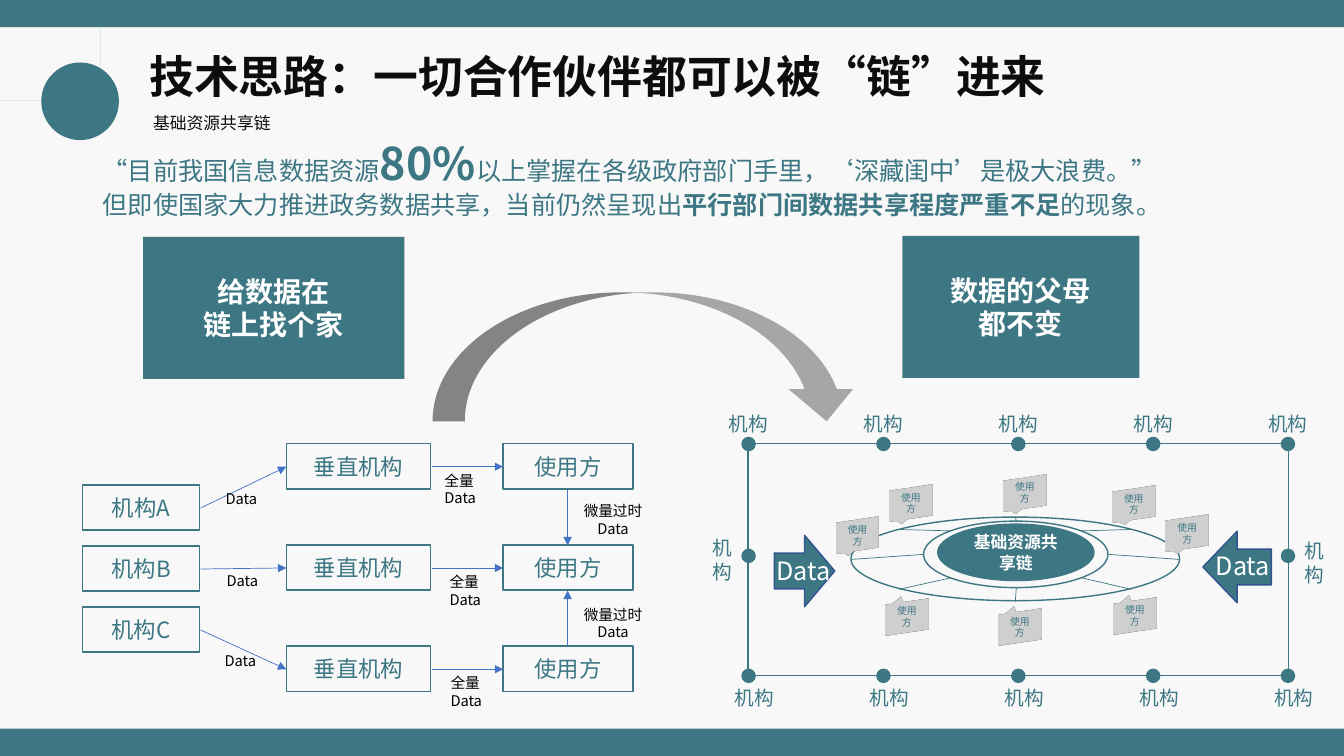
from math import cos, sin, radians
from lxml.etree import SubElement
from pptx import Presentation
from pptx.dml.color import RGBColor
from pptx.enum.shapes import MSO_CONNECTOR, MSO_SHAPE
from pptx.enum.text import MSO_ANCHOR, MSO_AUTO_SIZE, PP_ALIGN
from pptx.oxml.ns import qn
from pptx.util import Inches, Pt

FONT = "Noto Sans CJK SC"
TEAL = RGBColor(0x3D, 0x77, 0x84)
WHITE = RGBColor(0xFF, 0xFF, 0xFF)
PAPER = RGBColor(0xF8, 0xF8, 0xF8)
INK = RGBColor(0x0D, 0x0D, 0x0D)
BLACK = RGBColor(0, 0, 0)
BLUE = RGBColor(0x44, 0x72, 0xC4)
NAVY = RGBColor(0x32, 0x54, 0x91)
GREY = RGBColor(0xA6, 0xA6, 0xA6)
SILVER = RGBColor(0xBF, 0xBF, 0xBF)
PALE = RGBColor(0xD9, 0xD9, 0xD9)
MIDDLE = PP_ALIGN.CENTER


def style(font, size, color, bold=False):
    font.size = Pt(size)
    font.bold = bold
    font.color.rgb = color
    font.name = FONT
    SubElement(font._rPr, qn("a:ea")).set("typeface", FONT)


def write(frame, text, size, color, bold=False, align=PP_ALIGN.LEFT):
    frame.text = text
    for para in frame.paragraphs:
        para.alignment = align
        style(para.font, size, color, bold)


def label(slide, box, text, size, color, align=PP_ALIGN.LEFT, wrap=False):
    frame = slide.shapes.add_textbox(*map(Inches, box)).text_frame
    frame.word_wrap = wrap
    frame.auto_size = MSO_AUTO_SIZE.SHAPE_TO_FIT_TEXT
    write(frame, text, size, color, align=align)
    return frame


def paint(shape, fill, line=None, width=1):
    shape.shadow.inherit = False
    if fill is None:
        shape.fill.background()
    else:
        shape.fill.solid()
        shape.fill.fore_color.rgb = fill
    if line is None:
        shape.line.fill.background()
    else:
        shape.line.color.rgb = line
        shape.line.width = Pt(width)


def draw(slide, kind, box, fill=None, line=None, width=1):
    shape = slide.shapes.add_shape(kind, *map(Inches, box))
    paint(shape, fill, line, width)
    return shape


def block(slide, box, text, size, color, fill=None, line=None, bold=False,
          kind=MSO_SHAPE.RECTANGLE):
    shape = draw(slide, kind, box, fill, line)
    shape.text_frame.vertical_anchor = MSO_ANCHOR.MIDDLE
    write(shape.text_frame, text, size, color, bold, MIDDLE)


def link(slide, start, end, color, arrow=False):
    line = slide.shapes.add_connector(
        MSO_CONNECTOR.STRAIGHT, *map(Inches, (*start, *end)))
    line.line.color.rgb = color
    line.line.width = Pt(0.5)
    props = line._element.spPr
    if arrow:
        SubElement(props.find(qn("a:ln")), qn("a:tailEnd")).set("type", "triangle")
    SubElement(props, qn("a:effectLst"))


def outline(slide, points, fill):
    path = slide.shapes.build_freeform(*points[0], scale=Inches(1))
    path.add_line_segments(points[1:], close=True)
    paint(path.convert_to_shape(), fill)


def around(x, y, rx, ry, angle):
    turn = radians(angle)
    return x + rx * cos(turn), y + ry * sin(turn)


def tilt(shape):
    props = shape._element.spPr
    scene = SubElement(props, qn("a:scene3d"))
    SubElement(scene, qn("a:camera")).set("prst", "isometricOffAxis1Right")
    light = SubElement(scene, qn("a:lightRig"))
    light.set("rig", "threePt")
    light.set("dir", "t")
    SubElement(props, qn("a:sp3d"))


def callout(slide, x, y, above):
    shape = draw(slide, MSO_SHAPE.RECTANGULAR_CALLOUT, (x, y, 0.47, 0.32),
                 SILVER, PALE, 3.25)
    if not above:
        shape.adjustments[0] = -0.138
        shape.adjustments[1] = -0.694
    shape.text_frame.vertical_anchor = MSO_ANCHOR.MIDDLE
    write(shape.text_frame, "使用方", 7, TEAL, align=MIDDLE)
    tilt(shape)


def badge(slide):
    outer = [around(0.14, 0.43, 1.05, 1.05, a) for a in range(-9, 99)]
    inner = [around(0.14, 0.43, 0.81, 0.81, a) for a in range(100, -13, -1)]
    outline(slide, outer + inner, TEAL)
    draw(slide, MSO_SHAPE.OVAL, (0.41, 0.62, 0.77, 0.77), TEAL)
    outline(slide, [(0.65, 0.81), (1, 0.81), (1.01, 0.82), (1.01, 0.9),
                    (1, 0.91), (0.96, 0.91), (0.96, 1.2), (0.95, 1.21),
                    (0.65, 1.21), (0.64, 1.2), (0.64, 0.82)], WHITE)
    plus = draw(slide, MSO_SHAPE.CROSS, (0.74, 0.87, 0.12, 0.12), TEAL)
    plus.adjustments[0] = 0.33
    for row in range(3):
        bar = draw(slide, MSO_SHAPE.ROUNDED_RECTANGLE,
                   (0.7, 1.02 + 0.05 * row, 0.21, 0.03), TEAL)
        bar.adjustments[0] = 0.5
    draw(slide, MSO_SHAPE.RECTANGLE, (0.96, 0.84, 0.02, 0.04), TEAL)


def header(slide):
    label(slide, (1.42, 1.07, 2.55, 0.3), "基础资源共享链", 12, INK, wrap=True)
    badge(slide)
    for top in (7.23, 0):
        draw(slide, MSO_SHAPE.RECTANGLE, (0, top, 13.33, 0.27), TEAL)
    title = slide.shapes.title
    title.left, title.top, title.width, title.height = map(
        Inches, (1.38, 0.43, 9.18, 0.64))
    frame = title.text_frame
    write(frame, "技术思路：一切合作伙伴都可以被“链”进来", 32, INK, True)
    frame.word_wrap = False
    frame.vertical_anchor = MSO_ANCHOR.TOP


def quote(slide):
    lines = [
        [("“目前我国信息数据资源", 18, False), ("80%", 32, True),
         ("以上掌握在各级政府部门手里，‘深藏闺中’是极大浪费。”", 18, False)],
        [("但即使国家大力推进政务数据共享，当前仍然呈现出", 18, False),
         ("平行部门间数据共享程度严重不足", 18, True), ("的现象。", 18, False)]]
    frame = label(slide, (0.92, 1.3, 11.93, 0.94), "\n", 18, TEAL, wrap=True)
    for para, parts in zip(frame.paragraphs, lines):
        for text, size, bold in parts:
            run = para.add_run()
            run.text = text
            style(run.font, size, TEAL, bold)


def chain(slide):
    notes = [(2.14, 4.81, 4.31), (2.15, 5.62, 4.36), (2.13, 6.42, 4.37)]
    for row, (name, note) in enumerate(zip("ABC", notes)):
        left, top = 4.81 + 0.605 * row, 4.4 + 1.005 * row
        for x, y, wide, text in ((0.82, left, 1.16, "机构" + name),
                                 (2.84, top, 1.43, "垂直机构"),
                                 (4.99, top, 1.29, "使用方")):
            block(slide, (x, y, wide, 0.45), text, 16, TEAL, line=TEAL)
        mid = top + 0.23
        link(slide, (1.99, left + 0.23), (2.84, mid), BLUE, True)
        link(slide, (4.28, mid), (4.99, mid), BLUE, True)
        label(slide, (note[0], note[1], 0.55, 0.29), "Data", 10.5, BLACK)
        label(slide, (note[2], mid, 0.55, 0.47), "全量\nData", 10.5, BLACK)
    for start, end, top in ((4.85, 5.41, 4.93), (6.41, 5.86, 5.96)):
        link(slide, (5.63, start), (5.63, end), BLUE, True)
        label(slide, (5.64, top, 0.88, 0.47), "微量过时\nData", 10.5, BLACK,
              MIDDLE, True)


def hub(slide):
    block(slide, (9.3, 5.2, 1.55, 0.56), "基础资源共享链", 12, WHITE, TEAL,
          TEAL, True, MSO_SHAPE.OVAL)
    for box in ((9.16, 5.17, 1.83, 0.66), (8.44, 5.13, 3.26, 0.83)):
        draw(slide, MSO_SHAPE.OVAL, box, line=TEAL)
    for angle in range(0, 360, 45):
        link(slide, around(10.08, 5.5, 0.92, 0.33, angle),
             around(10.07, 5.55, 1.63, 0.42, angle), TEAL)
    for x, y in ((11.01, 4.84), (11.54, 5.13), (9.93, 4.73), (8.8, 4.83),
                 (8.27, 5.15), (9.88, 6.06), (8.76, 5.96), (11.02, 5.95)):
        callout(slide, x, y, y < 5.5)


def ring(slide):
    draw(slide, MSO_SHAPE.RECTANGLE, (7.42, 4.4, 5.36, 2.3), line=TEAL)
    step = 1.3375
    dots = [(7.36 + step * i, y) for y in (4.34, 6.64) for i in range(5)]
    for x, y in dots + [(7.36, 5.45), (12.71, 5.45)]:
        draw(slide, MSO_SHAPE.OVAL, (x, y, 0.13, 0.13), TEAL, TEAL)
    for kind, box, spot in (
            (MSO_SHAPE.RIGHT_ARROW, (7.68, 5.31, 0.6, 0.71), (7.6, 5.46)),
            (MSO_SHAPE.LEFT_ARROW, (11.93, 5.27, 0.68, 0.71), (11.96, 5.41))):
        draw(slide, kind, box, TEAL, NAVY)
        label(slide, (*spot, 0.77, 0.4), "Data", 18, WHITE)
    for left, top in ((7.13, 4.04), (7.19, 6.76)):
        for i in range(5):
            label(slide, (left + step * i, top, 0.59, 0.34), "机构", 14, TEAL)
    for left, top in ((6.97, 5.27), (12.84, 5.3)):
        label(slide, (left, top, 0.4, 0.57), "机\n构", 14, TEAL)


def main():
    deck = Presentation()
    deck.slide_width, deck.slide_height = Inches(13.33), Inches(7.5)
    slide = deck.slides.add_slide(deck.slide_layouts[5])
    slide.background.fill.solid()
    slide.background.fill.fore_color.rgb = PAPER
    header(slide)
    quote(slide)
    draw(slide, MSO_SHAPE.CURVED_DOWN_ARROW, (4.29, 2.9, 4.23, 1.28), GREY)
    block(slide, (1.42, 2.35, 2.59, 1.41), "给数据在\n链上找个家", 20, WHITE,
          TEAL, bold=True)
    block(slide, (8.95, 2.34, 2.35, 1.41), "数据的父母\n都不变", 20, WHITE,
          TEAL, bold=True)
    chain(slide)
    hub(slide)
    ring(slide)
    deck.save("out.pptx")


if __name__ == "__main__":
    main()
